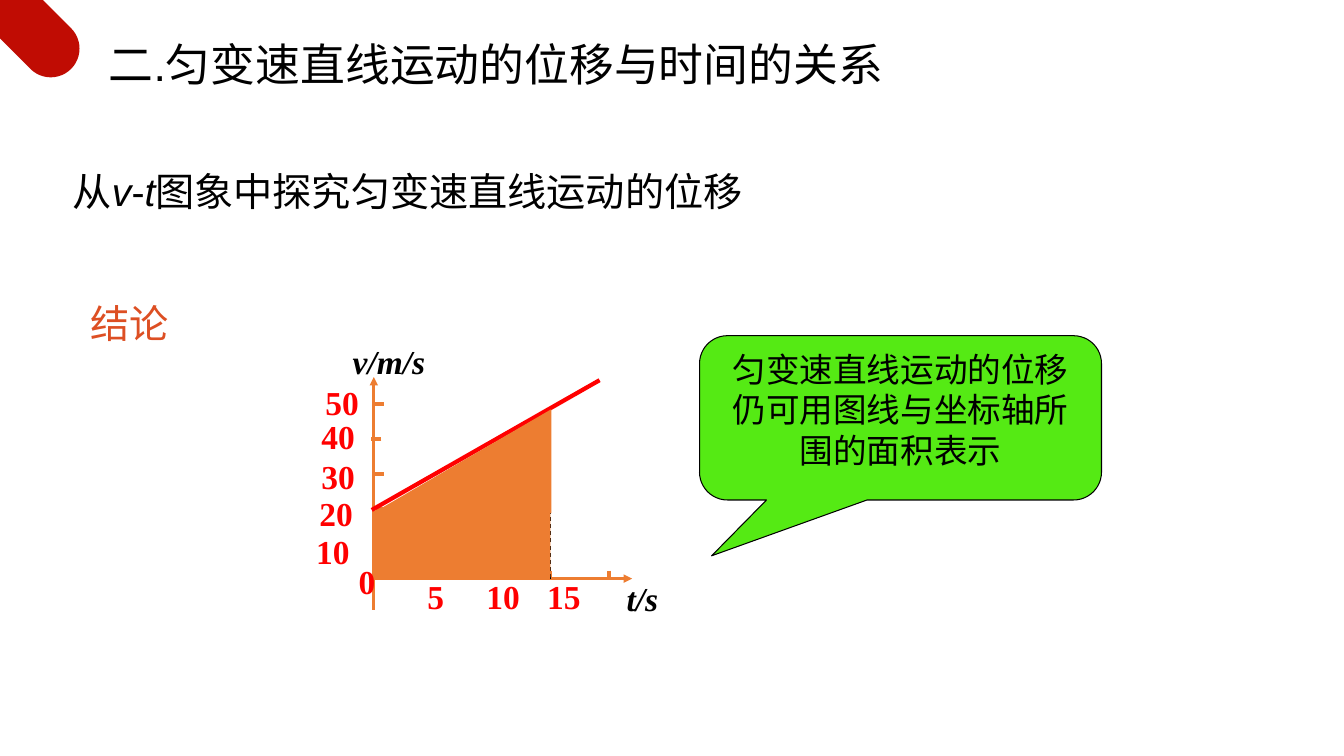
"""Build a slide on displacement as the area under a velocity-time graph."""
from dataclasses import dataclass, field

from lxml import etree
from pptx import Presentation
from pptx import util as u
from pptx.dml.color import RGBColor
from pptx.enum import dml, shapes, text
from pptx.oxml.ns import qn

COLORS = {
    "black": "000000",
    "red": "FF0000",
    "orange": "ED7D31",
    "green": "55EA14",
    "crimson": "C00C03",
    "rust": "DD4F23",
}
AXIS_LABEL = {"name": "Times New Roman", "size": u.Pt(23.9), "bold": True}
HEADING = {"name": "Arial", "size": u.Pt(32)}
SUBHEADING = {"name": "Arial", "size": u.Pt(28)}
CONCLUSION = {"name": "Calibri", "size": u.Pt(28)}
CALLOUT = {"name": "Times New Roman", "size": u.Pt(24)}
ORIGIN_X, ORIGIN_Y = 9.42, 14.58
TIME_STEP, SPEED_STEP = 1.48, 0.88


@dataclass
class Label:
    words: list[str]
    left: float
    top: float
    width: float
    height: float = 1.27
    color: str = "red"
    font: dict = field(default_factory=lambda: AXIS_LABEL)
    italics: tuple[int, ...] = ()
    centered: bool = False


@dataclass
class Stroke:
    start: tuple[float, float]
    end: tuple[float, float]
    color: str = "orange"
    width: float = 3
    arrow: bool = False
    dashed: bool = False


@dataclass
class Block:
    kind: shapes.MSO_SHAPE
    left: float
    top: float
    width: float
    height: float
    color: str
    adjustments: tuple[float, ...] = ()
    rotation: float = 0
    mirrored: bool = False


def rgb(name: str) -> RGBColor:
    return RGBColor.from_string(COLORS[name])


def write(frame, words: list[str], font: dict, color: str,
          italics: tuple[int, ...] = (), centered: bool = False) -> None:
    frame.word_wrap = True
    para = frame.paragraphs[0]
    para.alignment = text.PP_ALIGN.CENTER if centered else text.PP_ALIGN.LEFT
    for index, word in enumerate(words):
        span = para.add_run()
        span.text = word
        for key, value in {**font, "italic": index in italics}.items():
            setattr(span.font, key, value)
        span.font.color.rgb = rgb(color)


def draw_label(canvas, label: Label) -> None:
    box = canvas.add_textbox(u.Cm(label.left), u.Cm(label.top),
                             u.Cm(label.width), u.Cm(label.height))
    write(box.text_frame, label.words, label.font, label.color,
          label.italics, label.centered)


def draw_stroke(canvas, stroke: Stroke) -> None:
    points = [u.Cm(value) for value in (*stroke.start, *stroke.end)]
    connector = canvas.add_connector(shapes.MSO_CONNECTOR.STRAIGHT, *points)
    connector.line.color.rgb = rgb(stroke.color)
    connector.line.width = u.Pt(stroke.width)
    if stroke.dashed:
        connector.line.dash_style = dml.MSO_LINE.DASH
    properties = connector.element.spPr
    if stroke.arrow:
        etree.SubElement(properties.find(qn("a:ln")), qn("a:tailEnd"), type="triangle")
    etree.SubElement(properties, qn("a:effectLst"))


def draw_block(canvas, block: Block):
    shape = canvas.add_shape(block.kind, u.Cm(block.left), u.Cm(block.top),
                             u.Cm(block.width), u.Cm(block.height))
    shape.shadow.inherit = False
    shape.fill.solid()
    shape.fill.fore_color.rgb = rgb(block.color)
    shape.line.fill.background()
    shape.rotation = block.rotation
    for index, value in enumerate(block.adjustments):
        shape.adjustments[index] = value
    if block.mirrored:
        shape.element.spPr.xfrm.set("flipH", "1")
    return shape


def draw_axes(canvas) -> None:
    strokes = [
        Stroke((ORIGIN_X, ORIGIN_Y), (15.93, ORIGIN_Y), width=2, arrow=True),
        Stroke((ORIGIN_X, 15.37), (ORIGIN_X, 9.5), width=2, arrow=True),
    ]
    for step in range(1, 5):
        x = ORIGIN_X + step * TIME_STEP
        strokes.append(Stroke((x, 14.38), (x, 14.6)))
    for step, shift in enumerate((0, -0.06, 0, 0, 0)):
        x, y = ORIGIN_X + shift, 10.19 + step * SPEED_STEP
        strokes.append(Stroke((x + 0.25, y), (x, y)))
    for stroke in strokes:
        draw_stroke(canvas, stroke)

    labels = [
        Label(["v/m/s"], 8.64, 8.46, 2.59, color="black", italics=(0,)),
        Label(["t/s"], 15.54, 14.43, 2.06, color="black", italics=(0,)),
        Label(["50"], 7.95, 9.5, 1.5),
        Label(["40"], 7.85, 10.36, 1.83),
        Label(["30"], 7.85, 11.38, 1.4),
        Label(["20"], 7.8, 12.29, 1.4),
        Label(["10"], 7.72, 13.26, 1.4),
        Label(["0"], 8.79, 14.02, 0.94),
        Label(["5"], 10.52, 14.4, 0.94),
        Label(["10"], 12.01, 14.4, 1.42),
        Label(["15"], 13.54, 14.4, 1.4),
    ]
    for label in labels:
        draw_label(canvas, label)


def draw_callout(canvas) -> None:
    callout = draw_block(canvas, Block(
        shapes.MSO_SHAPE.ROUNDED_RECTANGULAR_CALLOUT, 17.63, 8.46, 10.13, 4.14,
        "green", (-0.47, 0.84, 0.17)))
    callout.line.color.rgb = rgb("black")
    callout.line.width = u.Pt(0.75)
    callout.text_frame.vertical_anchor = text.MSO_ANCHOR.TOP
    write(callout.text_frame, ["匀变速直线运动的位移仍可用图线与坐标轴所围的面积表示"],
          CALLOUT, "black", centered=True)


def main() -> None:
    deck = Presentation()
    deck.slide_width, deck.slide_height = u.Cm(33.87), u.Cm(19.05)
    page = deck.slides.add_slide(deck.slide_layouts[6])
    canvas = page.shapes

    draw_block(canvas, Block(shapes.MSO_SHAPE.ROUNDED_RECTANGLE, -6.71, -2.51,
                             9.96, 1.45, "crimson", (0.5,), rotation=45))
    draw_label(canvas, Label(["从", "v", "-", "t", "图象中探究匀变速直线运动的位移"],
                             0, 4.09, 20.55, 1.45, "black", SUBHEADING, (1, 3), True))
    draw_label(canvas, Label(["二.匀变速直线运动的位移与时间的关系"],
                             2.49, 0.79, 20.22, 1.63, "black", HEADING))

    draw_axes(canvas.add_group_shape().shapes)
    draw_stroke(canvas, Stroke((13.87, ORIGIN_Y), (13.87, 10.31), "black", 0.75, dashed=True))
    draw_stroke(canvas, Stroke((9.37, 12.85), (15.11, 9.58), "red"))

    area = canvas.add_group_shape().shapes
    draw_block(area, Block(shapes.MSO_SHAPE.RECTANGLE, 9.45, 12.85, 4.42, 1.7, "orange"))
    draw_block(area, Block(shapes.MSO_SHAPE.RIGHT_TRIANGLE, 9.4, 10.31, 4.5, 2.62,
                           "orange", mirrored=True))

    draw_callout(canvas)
    draw_label(canvas, Label(["结论"], 2.03, 7.42, 2.74, 1.45, "rust", CONCLUSION))
    deck.save("out.pptx")


if __name__ == "__main__":
    main()
